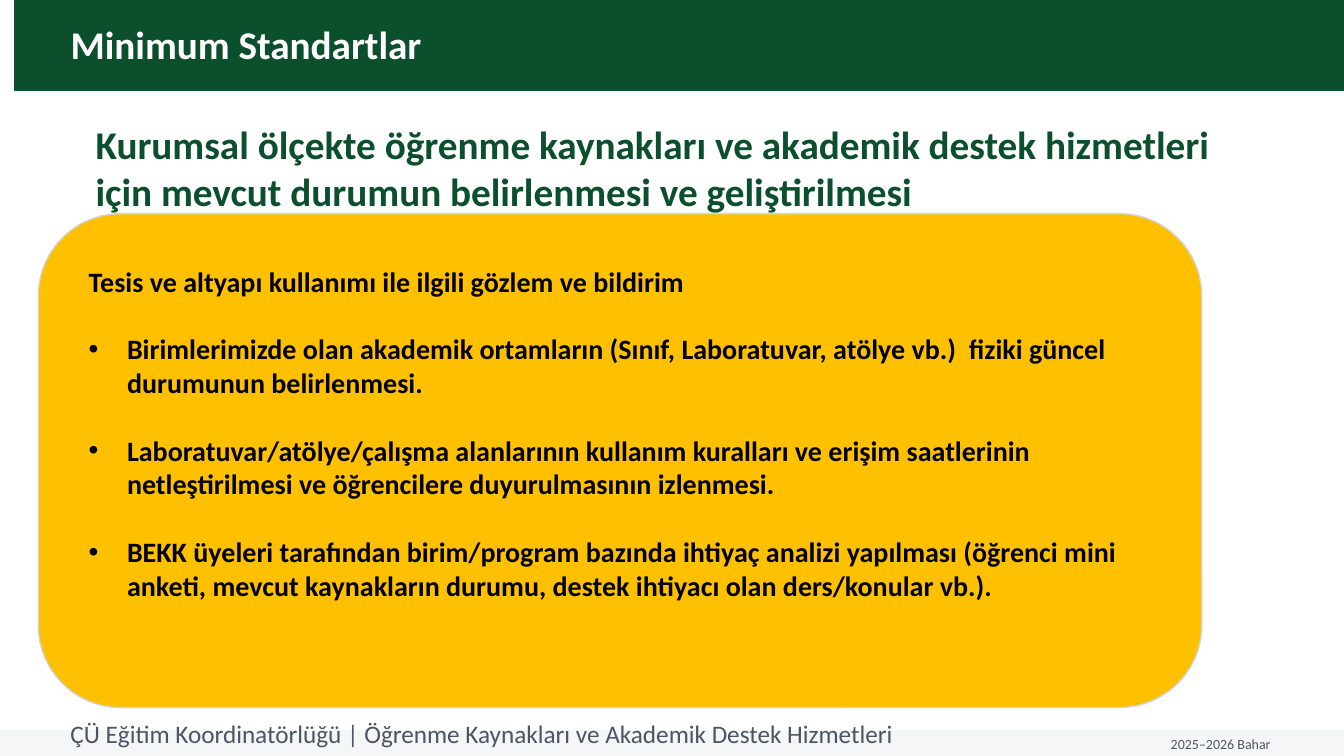
from dataclasses import dataclass

from lxml.etree import SubElement
from pptx import Presentation
from pptx.dml.color import RGBColor
from pptx.enum.shapes import MSO_SHAPE
from pptx.enum.text import MSO_ANCHOR, MSO_AUTO_SIZE, PP_ALIGN
from pptx.oxml.ns import qn
from pptx.util import Inches, Pt


@dataclass(frozen=True)
class Theme:
    font: str = "Calibri"
    green: str = "0B4F2D"
    amber: str = "FFC000"
    edge: str = "D1D5DB"
    pale: str = "F4F6F8"
    gray: str = "4B5563"
    white: str = "FFFFFF"
    black: str = "000000"
    head: int = 28
    body: int = 20
    foot: int = 18
    term: int = 10


theme = Theme()


def place(shape, box):
    shape.left, shape.top, shape.width, shape.height = map(Inches, box)


def write(shape, lines, size, color, bold=False, anchor=MSO_ANCHOR.MIDDLE):
    """Fill a text shape with left-aligned paragraphs in one style."""
    frame = shape.text_frame
    frame.word_wrap = True
    frame.auto_size = MSO_AUTO_SIZE.NONE
    frame.vertical_anchor = anchor
    frame.text = "\n".join(lines)
    for para in frame.paragraphs:
        para.alignment = PP_ALIGN.LEFT
        para.space_before = Pt(0)
        para.font.name = theme.font
        para.font.size = Pt(size)
        para.font.bold = bold
        para.font.color.rgb = RGBColor.from_string(color)
    return frame.paragraphs


deck = Presentation()
deck.slide_width, deck.slide_height = Inches(13.33), Inches(7.5)
slide = deck.slides.add_slide(deck.slide_layouts[1])
shapes = slide.shapes
title, body = slide.placeholders

# Bands and card
panels = [
    (MSO_SHAPE.RECTANGLE, (0.15, 0, 13.33, 0.9), theme.green, theme.green),
    (MSO_SHAPE.ROUNDED_RECTANGLE, (0.38, 2.12, 11.54, 4.9), theme.amber, theme.edge),
    (MSO_SHAPE.RECTANGLE, (0, 7.25, 13.33, 0.25), theme.pale, theme.pale),
]
for kind, box, fill, line in panels:
    panel = shapes.add_shape(kind, *map(Inches, box))
    panel.shadow.inherit = False
    panel.fill.solid()
    panel.fill.fore_color.rgb = RGBColor.from_string(fill)
    panel.line.color.rgb = RGBColor.from_string(line)
    panel.line.width = Pt(1)

# Title and list go in front of the panels
for holder in (title, body):
    shapes._spTree.append(holder._element)

place(title, (0.6, 0.18, 12.2, 0.5))
write(title, ["Minimum Standartlar"], theme.head, theme.white, True)

place(body, (0.78, 2.57, 10.55, 4.57))
items = [
    "Tesis ve altyapı kullanımı ile ilgili gözlem ve bildirim",
    "Birimlerimizde olan akademik ortamların (Sınıf, Laboratuvar, atölye vb.)  fiziki güncel durumunun belirlenmesi.",
    "Laboratuvar/atölye/çalışma alanlarının kullanım kuralları ve erişim saatlerinin netleştirilmesi ve öğrencilere duyurulmasının izlenmesi.",
    "BEKK üyeleri tarafından birim/program bazında ihtiyaç analizi yapılması (öğrenci mini anketi, mevcut kaynakların durumu, destek ihtiyacı olan ders/konular vb.).",
]
# Bullets precede the font settings in each paragraph
body.text_frame.text = "\n".join(items)
paras = write(body, items, theme.body, theme.black, True, MSO_ANCHOR.TOP)
for rank, para in enumerate(paras):
    props = para._p.get_or_add_pPr()
    hang = Inches(0.38) if rank else 0
    props.set("marL", str(hang))
    props.set("indent", str(-hang))
    mark = SubElement(props, qn("a:buChar" if rank else "a:buNone"))
    if rank:
        mark.set("char", "•")
        para.space_before = Pt(24.4)
    props.find(qn("a:defRPr")).addprevious(mark)

# Subtitle and footer
labels = [
    ("Kurumsal ölçekte öğrenme kaynakları ve akademik destek hizmetleri için mevcut durumun belirlenmesi ve geliştirilmesi",
     (0.85, 1.32, 11.7, 0.68), theme.head, theme.green, True, PP_ALIGN.LEFT),
    ("ÇÜ Eğitim Koordinatörlüğü | Öğrenme Kaynakları ve Akademik Destek Hizmetleri",
     (0.6, 7.18, 9.5, 0.2), theme.foot, theme.gray, False, PP_ALIGN.LEFT),
    ("2025–2026 Bahar",
     (10.4, 7.28, 2.3, 0.2), theme.term, theme.gray, False, PP_ALIGN.RIGHT),
]
for text, box, size, color, bold, align in labels:
    label = shapes.add_textbox(*map(Inches, box))
    write(label, [text], size, color, bold)[0].alignment = align

deck.save("out.pptx")
